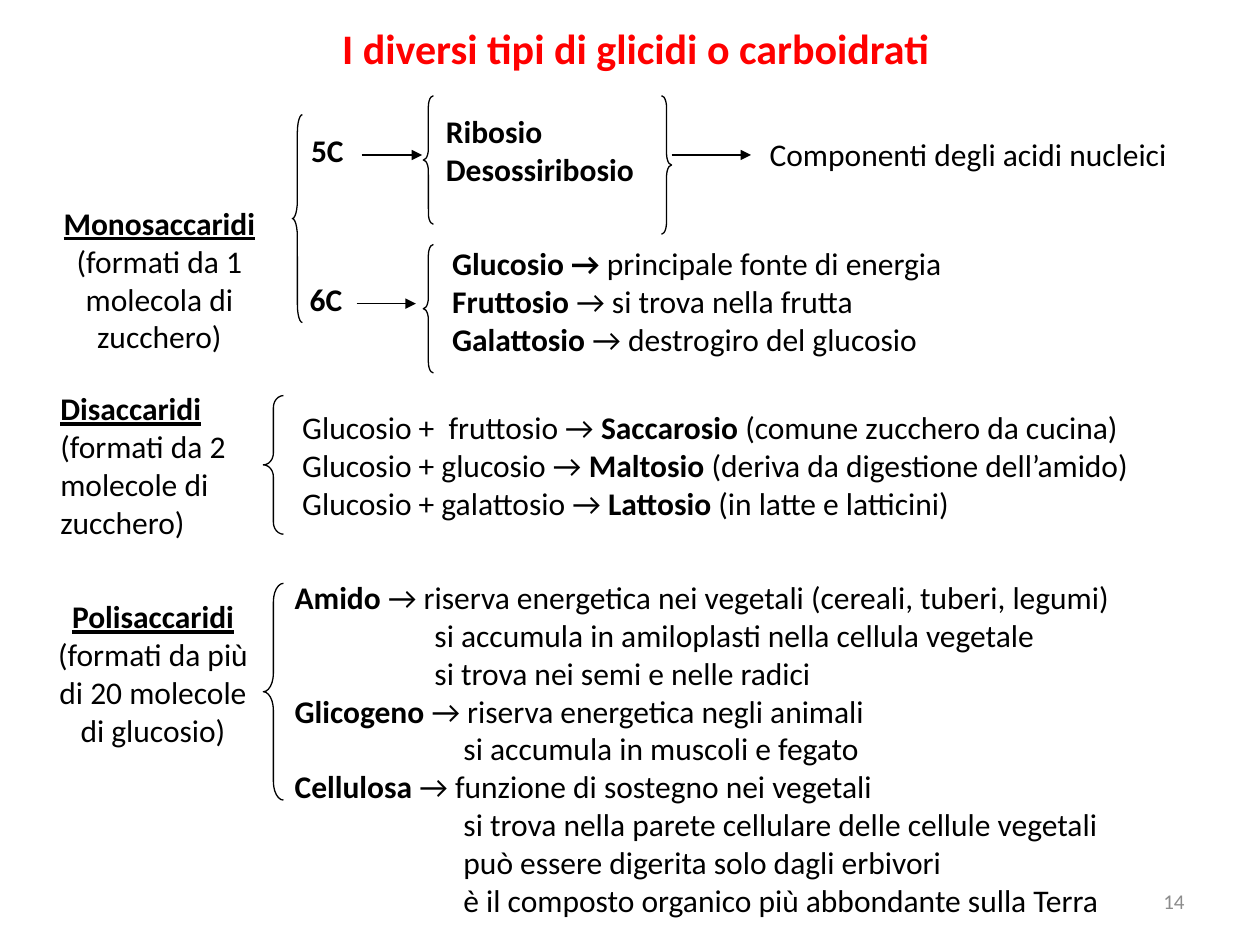
import pptx
import pptx.util
import pptx.dml.color
import pptx.enum.shapes
import pptx.enum.text
import pptx.oxml
import pptx.oxml.ns

Inches, Pt = pptx.util.Inches, pptx.util.Pt
RGBColor = pptx.dml.color.RGBColor
SHAPE = pptx.enum.shapes.MSO_SHAPE
ALIGN = pptx.enum.text.PP_ALIGN
ANCHOR = pptx.enum.text.MSO_ANCHOR

BLACK = RGBColor(0x00, 0x00, 0x00)
RED = RGBColor(0xFF, 0x00, 0x00)
GREY = RGBColor(0x8C, 0x8C, 0x8C)

prs = pptx.Presentation()
prs.slide_width, prs.slide_height = Inches(10), Inches(7.5)
s = prs.slides.add_slide(prs.slide_layouts[5])


def style(p, size=18, color=BLACK, align=ALIGN.LEFT):
    p.alignment = align
    p.font.name, p.font.size = "Calibri", Pt(size)
    p.font.color.rgb = color


def add_text(box, lines, size=18, color=BLACK, align=ALIGN.LEFT):
    """Write one paragraph per line; text between asterisks is bold."""
    tf = s.shapes.add_textbox(*map(Inches, box)).text_frame
    tf.word_wrap = True
    for i, line in enumerate(lines):
        p = tf.add_paragraph() if i else tf.paragraphs[0]
        style(p, size, color, align)
        for j, part in enumerate(line.split("*")):
            if part:
                r = p.add_run()
                r.text, r.font.bold = part, j % 2 == 1
    return tf


# Title
title = s.shapes.title
title.left, title.top, title.width, title.height = map(Inches, (0.17, 0.13, 9.75, 0.5))
title.text_frame.text = "I diversi tipi di glicidi o carboidrati"
p = title.text_frame.paragraphs[0]
style(p, 24, RED, ALIGN.CENTER)
p.font.bold = True

# The three classes, each with an underlined heading
for box, name, note, align in [
    ((0.27, 1.57, 1.99, 1.3), "Monosaccaridi", "(formati da 1 molecola di zucchero)", ALIGN.CENTER),
    ((0.38, 3.04, 1.65, 1.3), "Disaccaridi", "(formati da 2 molecole di zucchero)", ALIGN.LEFT),
    ((0.35, 4.69, 1.73, 1.6), "Polisaccaridi", "(formati da più di 20 molecole di glucosio)", ALIGN.CENTER),
]:
    tf = add_text(box, [f"*{name}*", note], align=align)
    tf.paragraphs[0].runs[0].font.underline = True

# Monosaccharides: carbon count, members, role
add_text((2.37, 0.99, 0.51, 0.4), ["*5C*"])
add_text((2.36, 2.17, 0.51, 0.4), ["*6C*"])
add_text((3.44, 0.84, 1.88, 0.7), ["*Ribosio*", "*Desossiribosio*"])
add_text((6.01, 1.02, 3.71, 0.4), ["Componenti degli acidi nucleici"])
add_text((3.49, 1.89, 4.21, 1.01), [
    "*Glucosio → *principale fonte di energia",
    "*Fruttosio *→ si trova nella frutta",
    "*Galattosio *→ destrogiro del glucosio",
])

# Disaccharides
add_text((2.3, 3.19, 7.62, 1), [
    "Glucosio +  fruttosio → *Saccarosio *(comune zucchero da cucina)",
    "Glucosio + glucosio → *Maltosio *(deriva da digestione dell’amido)",
    "Glucosio + galattosio → *Lattosio* (in latte e latticini)",
])

# Polysaccharides: details are indented under each name
polysaccharides = [
    (0, "*Amido *→ riserva energetica nei vegetali (cereali, tuberi, legumi)"),
    (1.11, "si accumula in amiloplasti nella cellula vegetale"),
    (1.11, "si trova nei semi e nelle radici"),
    (0, "*Glicogeno *→ riserva energetica negli animali"),
    (1.34, "si accumula in muscoli e fegato"),
    (0, "*Cellulosa *→ funzione di sostegno nei vegetali"),
    (1.34, "si trova nella parete cellulare delle cellule vegetali"),
    (1.34, "può essere digerita solo dagli erbivori"),
    (1.34, "è il composto organico più abbondante sulla Terra"),
]
tf = add_text((2.24, 4.54, 7.64, 2.8), [line for _, line in polysaccharides])
for p, (indent, _) in zip(tf.paragraphs, polysaccharides):
    p._p.get_or_add_pPr().set("marL", str(Inches(indent)))

# Braces
for kind, box, curve in [
    (SHAPE.LEFT_BRACE, (2.32, 0.91, 0.08, 1.65), 1.76),
    (SHAPE.LEFT_BRACE, (3.36, 0.76, 0.08, 1.02), 1.09),
    (SHAPE.RIGHT_BRACE, (5.25, 0.76, 0.08, 1.1), 1.18),
    (SHAPE.LEFT_BRACE, (3.36, 1.94, 0.08, 1.02), 1.09),
    (SHAPE.LEFT_BRACE, (2.09, 3.14, 0.16, 1.1), 0.59),
    (SHAPE.LEFT_BRACE, (2.09, 4.63, 0.16, 1.72), 0.92),
]:
    sp = s.shapes.add_shape(kind, *map(Inches, box))
    sp.adjustments[0] = curve
    sp.shadow.inherit = False
    sp.fill.background()
    sp.line.color.rgb, sp.line.width = BLACK, Pt(0.75)

# Arrows
for x1, x2, y in [(2.87, 3.35, 1.23), (5.33, 5.96, 1.23), (2.83, 3.3, 2.41)]:
    arrow = s.shapes.add_connector(pptx.enum.shapes.MSO_CONNECTOR.STRAIGHT,
                                   *map(Inches, (x1, y, x2, y)))
    arrow.line.color.rgb, arrow.line.width = BLACK, Pt(0.75)
    ns = pptx.oxml.ns.nsdecls("a")
    arrow.line._get_or_add_ln().append(
        pptx.oxml.parse_xml(f'<a:tailEnd {ns} type="triangle"/>'))
    arrow._element.spPr.append(pptx.oxml.parse_xml(f"<a:effectLst {ns}/>"))

# Slide number
tf = add_text((7.17, 6.95, 2.33, 0.4), ["14"], 12, GREY, ALIGN.RIGHT)
tf.vertical_anchor = ANCHOR.MIDDLE

prs.save("out.pptx")
